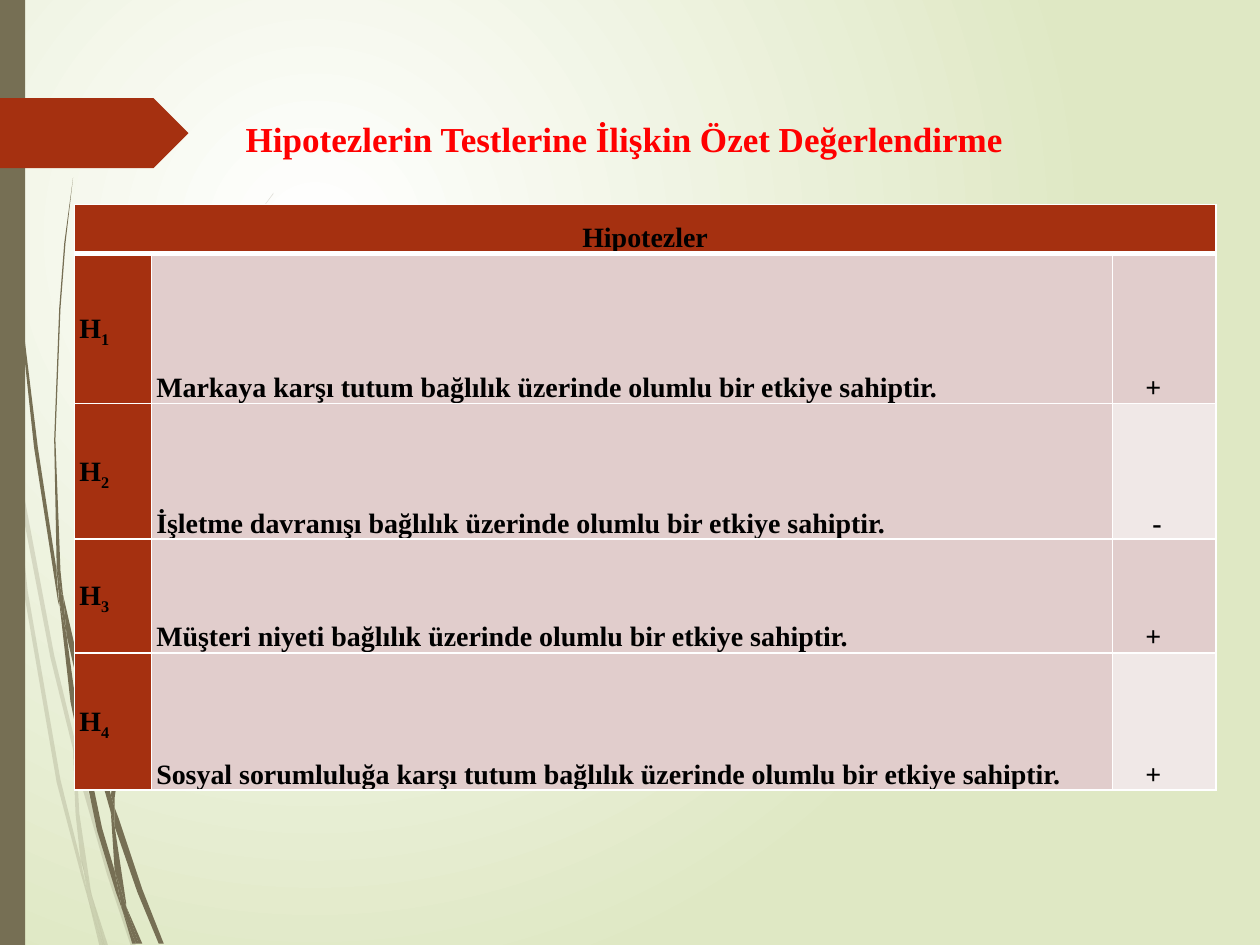
from lxml import etree
from pptx import Presentation
from pptx.dml.color import RGBColor
from pptx.enum.shapes import MSO_SHAPE
from pptx.enum.text import MSO_ANCHOR, MSO_AUTO_SIZE, PP_ALIGN
from pptx.oxml.ns import qn
from pptx.util import Cm, Pt

RECTANGLE, PENTAGON = MSO_SHAPE.RECTANGLE, MSO_SHAPE.PENTAGON
BOTTOM, MIDDLE = MSO_ANCHOR.BOTTOM, MSO_ANCHOR.MIDDLE
LEFT, CENTER, JUSTIFY = PP_ALIGN.LEFT, PP_ALIGN.CENTER, PP_ALIGN.JUSTIFY
NO_AUTOFIT = MSO_AUTO_SIZE.NONE

COLORS = {
    "olive": "766F54", "rust": "A53010", "rose": "E1CDCC", "light rose": "F0E8E7",
    "white": "FFFFFF", "pale green": "DFE8C4", "black": "000000", "red": "FF0000",
}
FONT = "Times New Roman"
WISP_UNIT = Cm(0.0254)

# Grass blade outlines, in wisp units
FAINT_BLADES = [
    [(8, 350), (6, 322), (0, 282), (0, 299), (7, 344)],
    [(40, 522), (59, 599), (59, 586), (43, 520), (10, 345), (12, 376)],
    [(64, 607), (61, 596), (61, 610), (85, 694), (104, 751), (108, 751), (88, 692)],
    [(83, 751), (86, 751), (73, 711)],
    [(64, 683), (48, 619), (22, 469), (12, 376), (8, 350), (19, 470), (45, 621),
     (64, 693), (70, 714), (69, 707)],
    [(58, 599), (60, 646), (64, 683), (67, 692), (73, 711), (72, 706), (63, 646),
     (61, 610), (61, 608)],
    [(61, 584), (76, 462), (111, 349), (159, 245), (187, 198), (201, 175), (217, 154),
     (217, 153), (201, 175), (186, 197), (158, 244), (110, 348), (75, 461), (59, 584),
     (59, 586), (61, 596)],
    [(70, 714), (79, 751), (82, 751)],
    [(61, 608), (61, 610), (61, 596), (59, 586), (58, 599)],
    [(67, 692), (65, 683), (69, 707), (70, 714), (82, 751), (83, 751), (73, 711)],
]
DARK_BLADES = [
    [(5, 110), (14, 233), (27, 355), (46, 477), (47, 481), (45, 457), (45, 453),
     (30, 355), (15, 232), (6, 109), (4, 48), (3, 0), (2, 0), (3, 48)],
    [(73, 592), (88, 645), (88, 633), (88, 631), (77, 590), (50, 472), (53, 505)],
    [(94, 649), (91, 641), (91, 656), (109, 708), (126, 749), (130, 749), (113, 706)],
    [(91, 691), (81, 657), (60, 556), (53, 505), (47, 477), (56, 557), (77, 659),
     (92, 708), (97, 722), (96, 717)],
    [(50, 472), (48, 453), (44, 349), (48, 245), (52, 193), (58, 141), (51, 193),
     (47, 245), (43, 349), (45, 449), (49, 472)],
    [(110, 749), (113, 749), (100, 719)],
    [(47, 477), (53, 505), (50, 472), (49, 472), (45, 449), (45, 453)],
    [(91, 633), (103, 552), (131, 476), (169, 406), (191, 374), (203, 359), (216, 344),
     (215, 344), (203, 358), (191, 373), (168, 405), (129, 474), (101, 551), (88, 631),
     (91, 641)],
    [(97, 722), (105, 749), (108, 749)],
    [(88, 645), (91, 691), (96, 706), (100, 719), (100, 716), (91, 656), (90, 651)],
    [(88, 645), (90, 651), (91, 656), (91, 641), (88, 631), (88, 633)],
    [(96, 706), (91, 691), (96, 717), (97, 722), (108, 749), (110, 749), (100, 719)],
]

# Hypothesis, result, indent of the result in cm, fill of the result
HYPOTHESES = [
    ("Markaya karşı tutum bağlılık üzerinde olumlu bir etkiye sahiptir.", "+"),
    ("İşletme davranışı bağlılık üzerinde olumlu bir etkiye sahiptir.", "-"),
    ("Müşteri niyeti bağlılık üzerinde olumlu bir etkiye sahiptir.", "+"),
    ("Sosyal sorumluluğa karşı tutum bağlılık üzerinde olumlu bir etkiye sahiptir.", "+"),
]
RESULT_INDENT = {"+": 0.66, "-": 0.8}
COLUMN_WIDTHS = [1.55, 19.38, 2.08]
ROW_HEIGHTS = [0.99, 3.02, 2.74, 2.29, 2.77]


def rgb(name):
    return RGBColor.from_string(COLORS[name])


def write_text(frame, text, subscript="", size=16, color="black", align=LEFT, spacing=1.15):
    paragraph = frame.paragraphs[0]
    paragraph.alignment = align
    paragraph.line_spacing = spacing
    for part in filter(None, (text, subscript)):
        run = paragraph.add_run()
        run.text = part
        run.font.name, run.font.size, run.font.bold = FONT, Pt(size), True
        run.font.color.rgb = rgb(color)
    if subscript:
        run.font._element.set("baseline", "-25000")


class SlideBuilder:
    def __init__(self, slide):
        self.slide = slide

    def background(self, inner, outer):
        fill = self.slide.background.fill
        fill.gradient()
        for stop, color in zip(fill.gradient_stops, (inner, outer)):
            stop.color.rgb = rgb(color)
        gradient = self.slide._element.find(".//" + qn("a:gradFill"))
        gradient.remove(gradient.find(qn("a:lin")))
        circle = etree.SubElement(gradient, qn("a:path"), {"path": "circle"})
        etree.SubElement(circle, qn("a:fillToRect"), l="50000", t="50000", r="100000", b="100000")

    def paint(self, shape, color, alpha=None):
        shape.shadow.inherit = False
        shape.fill.solid()
        shape.fill.fore_color.rgb = rgb(color)
        shape.line.fill.background()
        if alpha:
            tint = shape._element.spPr.find(".//" + qn("a:srgbClr"))
            etree.SubElement(tint, qn("a:alpha"), val=str(alpha * 1000))

    def blade(self, points, alpha=None):
        builder = self.slide.shapes.build_freeform(*points[0], scale=WISP_UNIT)
        builder.add_line_segments(points[1:], close=True)
        self.paint(builder.convert_to_shape(), "olive", alpha)

    def block(self, kind, left, top, width, height, color):
        shape = self.slide.shapes.add_shape(kind, Cm(left), Cm(top), Cm(width), Cm(height))
        self.paint(shape, color)

    def title(self, text, left, top, width, height):
        title = self.slide.shapes.title
        title.left, title.top, title.width, title.height = map(Cm, (left, top, width, height))
        frame = title.text_frame
        frame.auto_size = NO_AUTOFIT
        frame.vertical_anchor = MIDDLE
        write_text(frame, text, size=20, color="red", spacing=1)

    def table(self, left, top, widths, heights):
        frame = self.slide.shapes.add_table(
            len(heights), len(widths), Cm(left), Cm(top), Cm(sum(widths)), Cm(sum(heights)))
        table = frame.table
        table.first_row = table.horz_banding = False
        for column, width in zip(table.columns, widths):
            column.width = Cm(width)
        for row, height in zip(table.rows, heights):
            row.height = Cm(height)
        return table

    def cell(self, cell, text, fill, anchor=BOTTOM, indent=0.1, top=1, bottom=1, **text_format):
        cell.margin_left, cell.margin_right = Cm(indent), Cm(0.1)
        cell.margin_top = cell.margin_bottom = 0
        cell.vertical_anchor = anchor
        properties = cell._tc.get_or_add_tcPr()
        for side, width in (("L", 1), ("R", 1), ("T", top), ("B", bottom)):
            line = etree.SubElement(properties, qn("a:ln" + side), w=str(Pt(width)))
            solid = etree.SubElement(line, qn("a:solidFill"))
            etree.SubElement(solid, qn("a:srgbClr"), val=COLORS["white"])
        cell.fill.solid()
        cell.fill.fore_color.rgb = rgb(fill)
        write_text(cell.text_frame, text, **text_format)


def main():
    presentation = Presentation()
    presentation.slide_width, presentation.slide_height = Cm(25.4), Cm(19.05)
    builder = SlideBuilder(presentation.slides.add_slide(presentation.slide_layouts[5]))

    # Backdrop
    builder.background("white", "pale green")
    for points in FAINT_BLADES:
        builder.blade(points, alpha=20)
    for points in DARK_BLADES:
        builder.blade(points)
    builder.block(RECTANGLE, 0, 0, 0.51, 19.05, "olive")
    builder.block(PENTAGON, 0, 1.98, 3.8, 1.41, "rust")

    # Table of hypotheses
    table = builder.table(1.5, 4.12, COLUMN_WIDTHS, ROW_HEIGHTS)
    table.cell(0, 0).merge(table.cell(0, 2))
    for column, heading in enumerate(("Hipotezler", "", "")):
        builder.cell(table.cell(0, column), heading, "rust", bottom=3, align=CENTER)
    for row, (hypothesis, result) in enumerate(HYPOTHESES, start=1):
        top = 3 if row == 1 else 1
        builder.cell(table.cell(row, 0), "H", "rust", anchor=MIDDLE, top=top,
                     subscript=str(row), align=JUSTIFY)
        builder.cell(table.cell(row, 1), hypothesis, "rose", top=top)
        builder.cell(table.cell(row, 2), result, "rose" if row % 2 else "light rose",
                     indent=RESULT_INDENT[result], top=top)

    # Title
    builder.title("Hipotezlerin Testlerine İlişkin Özet Değerlendirme", 4.7, 2.24, 16.18, 1.12)
    presentation.save("out.pptx")


if __name__ == "__main__":
    main()
